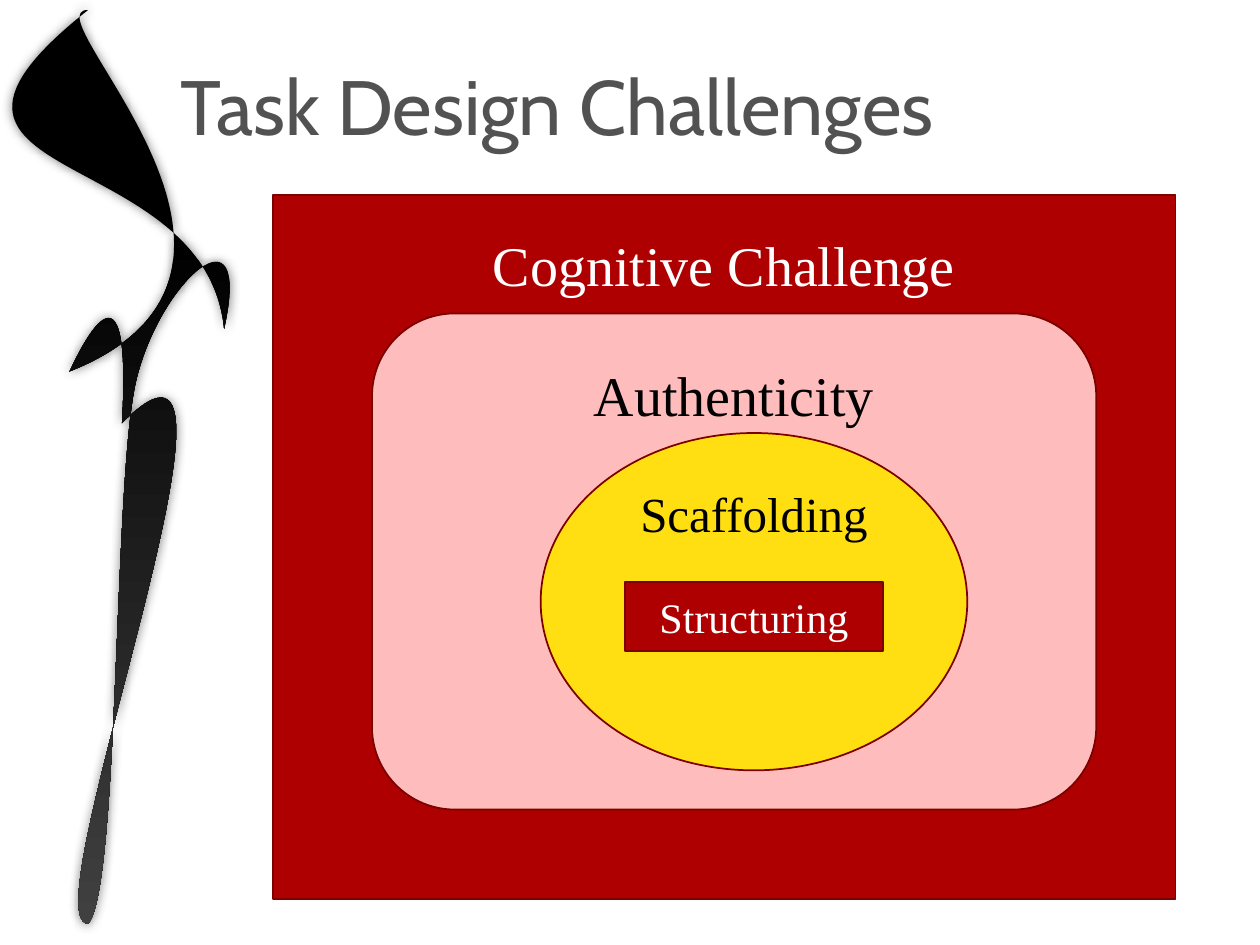
from lxml.etree import SubElement
from pptx import Presentation
from pptx.dml.color import RGBColor
from pptx.enum.shapes import MSO_SHAPE
from pptx.enum.text import MSO_ANCHOR, PP_ALIGN
from pptx.oxml.ns import qn
from pptx.util import Cm, Pt

RED, DARK_RED, PINK, YELLOW = "AE0000", "7B0000", "FFBCBC", "FFDE12"
BLACK, GREY, TITLE_GREY, WHITE = "000000", "404040", "525252", "FFFFFF"

# Bezier segments in cm: first control, second control, end point
RIBBON_START = (2.46, 8.53)
RIBBON_CURVES = [
    ((2.69, 4.47), (1.42, 7.49), (1.4, 7.49)),
    ((6.53, 5.46), (0.53, 0.2), (1.78, 0.2)),
    ((-2.74, 3.78), (4.14, 2.82), (4.52, 6.63)),
    ((5.11, 3.99), (3.2, 5.69), (2.74, 7.7)),
    ((2.29, 9.68), (2.41, 17.88), (1.78, 18.62)),
    ((0.53, 18.62), (5.72, 5.26), RIBBON_START),
]

# Shape, left, top, width, height (cm), fill, label, size, colour, label offset (cm)
LAYERS = [
    (MSO_SHAPE.RECTANGLE, 5.5, 3.93, 18.2, 14.2, RED,
     "Cognitive Challenge", 32, WHITE, 0.71),
    (MSO_SHAPE.ROUNDED_RECTANGLE, 7.5, 6.32, 14.6, 10, PINK,
     "Authenticity", 32, BLACK, 0.46),
    (MSO_SHAPE.OVAL, 10.9, 8.73, 8.6, 6.8, YELLOW,
     "Scaffolding", 28, BLACK, 0.03),
    (MSO_SHAPE.RECTANGLE, 12.6, 11.73, 5.2, 1.4, RED,
     "Structuring", 24, WHITE, 0.19),
]


def color(value):
    return RGBColor.from_string(value)


def place(box, left, top, width, height):
    box.left, box.top = Cm(left), Cm(top)
    box.width, box.height = Cm(width), Cm(height)


def format_paragraph(paragraph, font_name, size, text_color, alignment):
    paragraph.alignment = alignment
    font = paragraph.font
    font.name, font.size = font_name, Pt(size)
    font.color.rgb = color(text_color)


def set_title(page, text):
    title = page.shapes.title
    place(title, 3.38, 0.2, 18.9, 3.81)
    frame = title.text_frame
    frame.text = text
    frame.vertical_anchor = MSO_ANCHOR.MIDDLE
    format_paragraph(frame.paragraphs[0], "Cabin", 44, TITLE_GREY, PP_ALIGN.LEFT)


def bend_lines(shape):
    """Turn every three line segments of a freeform into one cubic curve."""
    lines = list(shape._element.iter(qn("a:lnTo")))
    for index in range(0, len(lines), 3):
        curve = lines[index]
        curve.tag = qn("a:cubicBezTo")
        for line in lines[index + 1:index + 3]:
            curve.append(line[0])
            line.getparent().remove(line)


def add_soft_shadow(shape, shadow_color, blur, opacity):
    effects = SubElement(shape._element.spPr, qn("a:effectLst"))
    shadow = SubElement(effects, qn("a:outerShdw"),
                        blurRad=str(Pt(blur)), dist="0", rotWithShape="0")
    tint = SubElement(shadow, qn("a:srgbClr"), val=shadow_color)
    SubElement(tint, qn("a:alpha"), val=str(opacity * 1000))


def add_ribbon(page):
    builder = page.shapes.build_freeform(*map(Cm, RIBBON_START))
    points = [tuple(map(Cm, point)) for curve in RIBBON_CURVES for point in curve]
    builder.add_line_segments(points, close=True)
    ribbon = builder.convert_to_shape()
    bend_lines(ribbon)
    ribbon.fill.gradient()
    ribbon.fill.gradient_angle = 270
    stops = ribbon.fill.gradient_stops
    for stop, position, value in zip(stops, (0.25, 1), (BLACK, GREY)):
        stop.position = position
        stop.color.rgb = color(value)
    ribbon.line.fill.background()
    add_soft_shadow(ribbon, GREY, 6, 70)


def add_layer(group, kind, left, top, width, height, fill, label, size,
              text_color, offset):
    shape = group.shapes.add_shape(kind, Cm(left), Cm(top), Cm(width), Cm(height))
    shape.shadow.inherit = False
    shape.fill.solid()
    shape.fill.fore_color.rgb = color(fill)
    shape.line.color.rgb = color(DARK_RED)
    shape.line.width = Pt(1)
    frame = shape.text_frame
    frame.vertical_anchor = MSO_ANCHOR.TOP
    frame.margin_top, frame.margin_bottom = Cm(offset), 0
    frame.text = label
    format_paragraph(frame.paragraphs[0], "Times New Roman", size, text_color,
                     PP_ALIGN.CENTER)


def main():
    deck = Presentation()
    deck.slide_width, deck.slide_height = Cm(25.4), Cm(19.05)
    page = deck.slides.add_slide(deck.slide_layouts[5])
    add_ribbon(page)
    set_title(page, "Task Design Challenges")
    group = page.shapes.add_group_shape()
    for layer in LAYERS:
        add_layer(group, *layer)
    deck.save("out.pptx")


if __name__ == "__main__":
    main()
